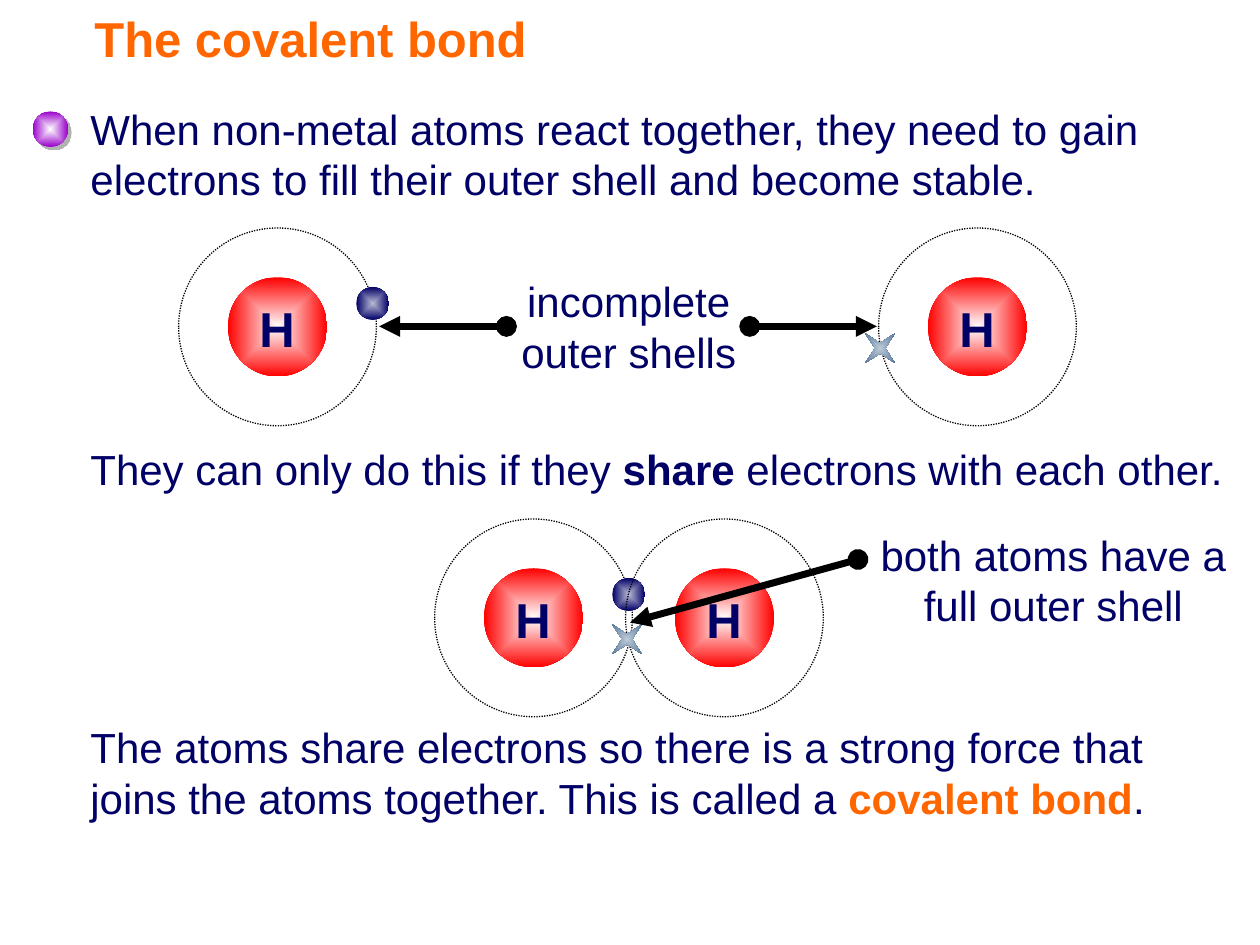
import pptx
import pptx.util
import pptx.dml.color
import pptx.enum.dml
import pptx.enum.shapes
import pptx.enum.text
import pptx.oxml
import pptx.oxml.ns

Pt = pptx.util.Pt
RGB = pptx.dml.color.RGBColor
KIND = pptx.enum.shapes.MSO_SHAPE
ALIGN = pptx.enum.text.PP_ALIGN
ANCHOR = pptx.enum.text.MSO_ANCHOR
NS = pptx.oxml.ns.nsdecls("a")

WHITE = RGB(0xFF, 0xFF, 0xFF)
BLACK = RGB(0, 0, 0)
NAVY = RGB(0x01, 0x00, 0x66)
ORANGE = RGB(0xFF, 0x66, 0x00)
RED = RGB(0xFF, 0x00, 0x00)
PURPLE = RGB(0x99, 0x00, 0xCC)
LILAC = RGB(0xB9, 0xB9, 0xD5)
STEEL = RGB(0xBE, 0xCB, 0xD8)
DEEP = RGB(0x01, 0x33, 0x66)

BODY = {"size": Pt(24), "name": "Arial", "bold": False}
HEAD = {"size": Pt(28), "name": "Arial", "bold": True}

# Runs are (words, colour, bold); boxes are left, top, width, height
TITLE = [("The covalent bond", ORANGE, True)]
BODIES = [
    ((44.6, 55.4, 675.4, 64.8), ALIGN.LEFT, [
        ("When non-metal atoms react together, they need to gain "
         "electrons to fill their outer shell and become stable.", NAVY, False)]),
    ((44.6, 249.8, 675.4, 36), ALIGN.LEFT, [
        ("They can only do this if they ", NAVY, False),
        ("share", NAVY, True),
        (" electrons with each other.", NAVY, False)]),
    ((44.6, 409, 655.2, 64.8), ALIGN.LEFT, [
        ("The atoms share electrons so there is a strong force that "
         "joins the atoms together. This is called a ", NAVY, False),
        ("covalent bond", ORANGE, True),
        (".", NAVY, False)]),
    ((287.3, 154.1, 144, 64.8), ALIGN.CENTER, [
        ("incomplete outer shells", NAVY, False)]),
    ((491, 298.8, 221.8, 64.8), ALIGN.CENTER, [
        ("both atoms have a full outer shell", NAVY, False)]),
]
# Centre x, centre y, electron mark
ATOMS = [(158.6, 186.8, "dot"), (558.6, 186.8, "star"),
         (304.9, 353.1, "dot"), (414, 353.1, "star")]
ARROWS = [(428.4, 186.5, 501.1, 186.5), (289.4, 186.5, 216.7, 186.5),
          (490.3, 319.7, 360, 355.7)]
SHELL, CORE, DOT, STAR = 113, 56.7, 18.7, 23.8

deck = pptx.Presentation()
deck.slide_width, deck.slide_height = Pt(720), Pt(540)
slide = deck.slides.add_slide(deck.slide_layouts[6])
shapes = slide.shapes


def write(box, runs, style, align=ALIGN.LEFT, anchor=ANCHOR.TOP):
    area = shapes.add_textbox(*map(Pt, box))
    frame = area.text_frame
    frame.word_wrap = True
    frame.vertical_anchor = anchor
    para = frame.paragraphs[0]
    para.alignment = align
    for words, colour, bold in runs:
        run = para.add_run()
        run.text = words
        for key, value in {**style, "bold": bold}.items():
            setattr(run.font, key, value)
        run.font.color.rgb = colour
    return frame


def place(kind, x, y, size):
    """Add a square-framed shape centred on x, y."""
    form = shapes.add_shape(kind, Pt(x - size / 2), Pt(y - size / 2),
                            Pt(size), Pt(size))
    form.shadow.inherit = False
    return form


def ball(kind, x, y, size, inner, outer):
    """Add a shape shaded from its middle to its edge."""
    form = place(kind, x, y, size)
    form.line.fill.background()
    form.fill.gradient()
    for stop, colour in zip(form.fill.gradient_stops, (inner, outer)):
        stop.color.rgb = colour
    grad = form._element.spPr.find(pptx.oxml.ns.qn("a:gradFill"))
    grad.remove(grad.find(pptx.oxml.ns.qn("a:lin")))
    grad.append(pptx.oxml.parse_xml(
        f'<a:path {NS} path="shape"><a:fillToRect l="50000" t="50000" '
        'r="50000" b="50000"/></a:path>'))
    return form


def atom(x, y, mark):
    ball(KIND.OVAL, x, y, CORE, WHITE, RED)
    write((x - 24, y - 20, 47.5, 41), [("H", NAVY, True)], HEAD, ALIGN.CENTER)
    shell = place(KIND.OVAL, x, y, SHELL)
    shell.fill.background()
    shell.line.color.rgb = BLACK
    shell.line.width = Pt(0.75)
    shell.line.dash_style = pptx.enum.dml.MSO_LINE.ROUND_DOT
    if mark == "dot":
        ball(KIND.OVAL, x + 54.4, y - 13.4, DOT, LILAC, NAVY)
    else:
        star = ball(KIND.STAR_4_POINT, x - 55.7, y + 12.2, STAR, STEEL, DEEP)
        star.adjustments[0] = 0.125
        star.rotation = 45


def arrow(*ends):
    link = shapes.add_connector(pptx.enum.shapes.MSO_CONNECTOR.STRAIGHT,
                                *map(Pt, ends))
    link.line.color.rgb = BLACK
    link.line.width = Pt(4)
    for tag, kind in (("headEnd", "oval"), ("tailEnd", "triangle")):
        link.line._get_or_add_ln().append(
            pptx.oxml.parse_xml(f'<a:{tag} {NS} type="{kind}"/>'))
    link._element.spPr.append(pptx.oxml.parse_xml(f"<a:effectLst {NS}/>"))


title = write((0, 0, 513.4, 43.2), TITLE, HEAD, anchor=ANCHOR.MIDDLE)
title.margin_left = Pt(54)

bullet = ball(KIND.OVAL, 28.8, 73.8, 20.2, WHITE, PURPLE)
bullet._element.spPr.find(pptx.oxml.ns.qn("a:effectLst")).append(
    pptx.oxml.parse_xml(
        f'<a:outerShdw {NS} dist="35921" dir="2700000" algn="ctr" '
        'rotWithShape="0"><a:srgbClr val="B2B2B2"/></a:outerShdw>'))

for box, align, runs in BODIES:
    write(box, runs, BODY, align)
for item in ATOMS:
    atom(*item)
for ends in ARROWS:
    arrow(*ends)

deck.save("out.pptx")
